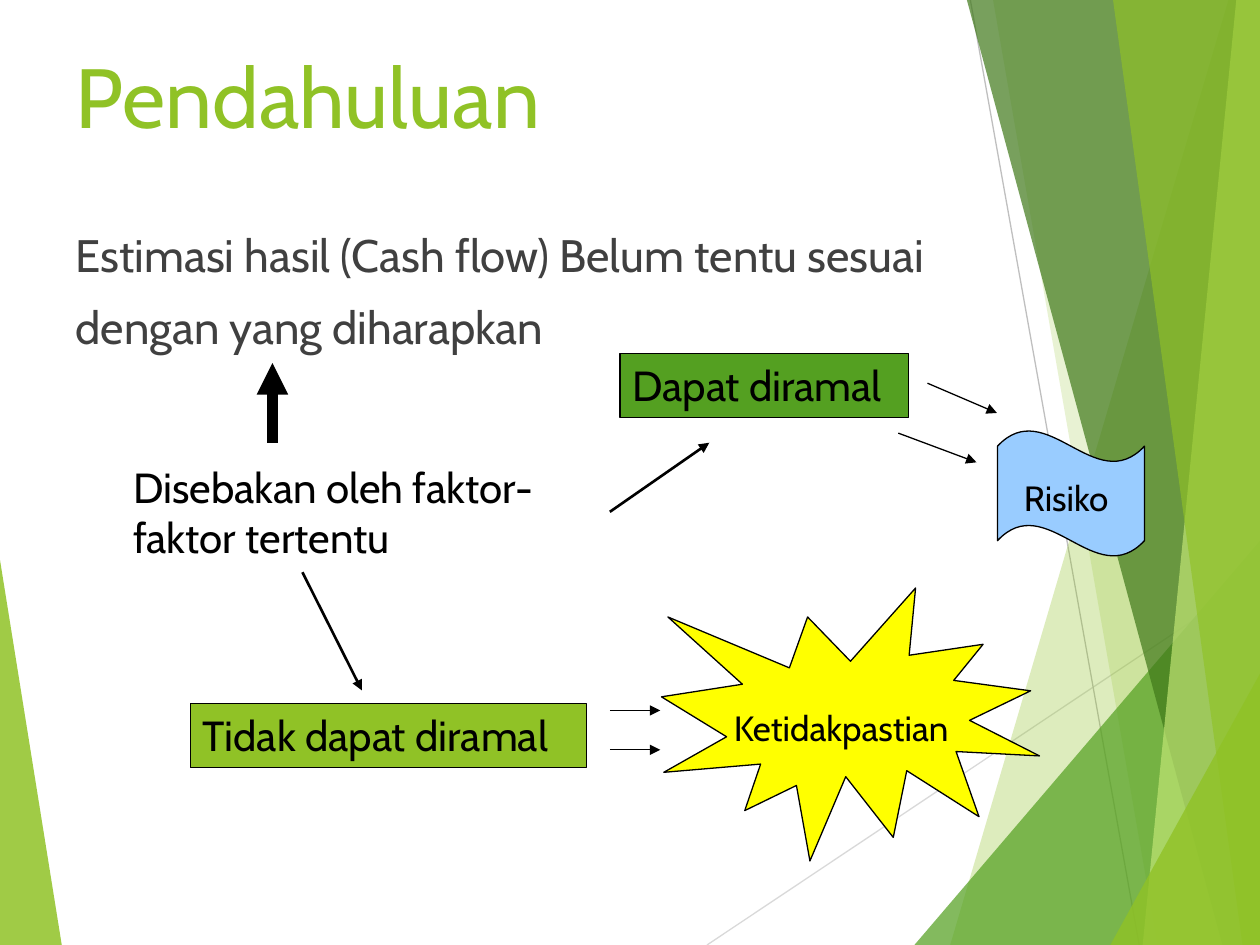
from typing import NamedTuple, Optional

from lxml.etree import SubElement
from pptx import Presentation
from pptx.dml.color import RGBColor
from pptx.enum.shapes import MSO_CONNECTOR, MSO_SHAPE
from pptx.enum.text import MSO_ANCHOR, MSO_AUTO_SIZE, PP_ALIGN
from pptx.oxml.ns import qn
from pptx.util import Pt

FONT = "Cabin"
BLACK = RGBColor(0x00, 0x00, 0x00)
CHARCOAL = RGBColor(0x40, 0x40, 0x40)
LIME = RGBColor(0x90, 0xC2, 0x26)
GREEN = RGBColor(0x54, 0xA0, 0x21)
DARK_GREEN = RGBColor(0x3F, 0x78, 0x19)
PALE_LIME = RGBColor(0xC0, 0xE4, 0x74)
SKY = RGBColor(0x99, 0xCC, 0xFF)
YELLOW = RGBColor(0xFF, 0xFF, 0x00)
LIGHT_GREY = RGBColor(0xD9, 0xD9, 0xD9)
GREY = RGBColor(0xBF, 0xBF, 0xBF)
WIDTH, HEIGHT = 720, 540


class Facet(NamedTuple):
    corners: list[tuple[float, float]]
    color: RGBColor
    opacity: int


class Line(NamedTuple):
    start: tuple[float, float]
    end: tuple[float, float]
    weight: float = 0.75
    color: RGBColor = BLACK
    arrow: bool = True


class Symbol(NamedTuple):
    preset: MSO_SHAPE
    box: tuple[float, float, float, float]
    fill: RGBColor


class Label(NamedTuple):
    lines: list[str]
    box: tuple[float, float, float, float]
    size: int = 24
    fill: Optional[RGBColor] = None


def right_facet(top: float, bottom: float, color: RGBColor, opacity: int) -> Facet:
    """Full-height facet between a slanted edge and the right slide edge."""
    return Facet([(top, 0), (bottom, HEIGHT), (WIDTH, HEIGHT), (WIDTH, 0)], color, opacity)


def corner_facet(left: float, top: float, color: RGBColor, opacity: int) -> Facet:
    """Triangle in the bottom right corner."""
    return Facet([(left, HEIGHT), (WIDTH, top), (WIDTH, HEIGHT)], color, opacity)


LEFT_FACET = Facet([(0, 320), (35.3, HEIGHT), (0, HEIGHT)], LIME, 85)
BACKDROP_LINES = [
    Line((404, 540), (720, 329), color=LIGHT_GREY, arrow=False),
    Line((554.5, 0), (651, 540), color=GREY, arrow=False),
]
RIGHT_FACETS = [
    right_facet(702, 543, LIME, 30),
    right_facet(567.5, 661.5, LIME, 20),
    corner_facet(522.5, 309, GREEN, 72),
    right_facet(552.5, 698.5, DARK_GREEN, 70),
    right_facet(706.5, 653, PALE_LIME, 70),
    right_facet(636, 710, LIME, 65),
    corner_facet(634.5, 385, LIME, 80),
]
SYMBOLS = [
    Symbol(MSO_SHAPE.WAVE, (570, 246, 84, 72), SKY),
    Symbol(MSO_SHAPE.EXPLOSION1, (378, 336, 216, 156), YELLOW),
]
LABELS = [
    Label(["Disebakan oleh faktor-", "faktor tertentu"], (69, 260, 255, 65)),
    Label(["Dapat diramal"], (354.3, 202, 165, 36.6), fill=GREEN),
    Label(["Tidak dapat diramal"], (108.7, 402, 226.3, 36.6), fill=LIME),
    Label(["Risiko"], (578, 268.8, 69, 31), 20),
    Label(["Ketidakpastian"], (412.3, 400.3, 145.5, 31), 20),
]
ARROWS = [
    Line((155.7, 253), (155.7, 207.5), 6),
    Line((172.8, 327), (206.8, 394.5), 1.5),
    Line((348.5, 292.5), (405.3, 253), 1.5),
    Line((348.5, 406), (377.3, 406)),
    Line((348.5, 428.5), (377.3, 428.5)),
    Line((530, 219), (569.7, 236)),
    Line((513.3, 247.5), (558, 264.2)),
]


def draw_facet(shapes, facet: Facet) -> None:
    first, *others = [(Pt(x), Pt(y)) for x, y in facet.corners]
    builder = shapes.build_freeform(*first)
    builder.add_line_segments(others, close=True)
    shape = builder.convert_to_shape()
    shape.shadow.inherit = False
    shape.fill.solid()
    shape.fill.fore_color.rgb = facet.color
    shape.line.fill.background()
    color = shape.element.find(".//" + qn("a:srgbClr"))
    SubElement(color, qn("a:alpha"), val=str(facet.opacity * 1000))


def draw_line(shapes, line: Line) -> None:
    connector = shapes.add_connector(
        MSO_CONNECTOR.STRAIGHT, *(Pt(v) for v in line.start + line.end)
    )
    connector.line.color.rgb = line.color
    connector.line.width = Pt(line.weight)
    properties = connector.element.spPr
    if line.arrow:
        SubElement(properties.find(qn("a:ln")), qn("a:tailEnd"), type="triangle")
    SubElement(properties, qn("a:effectLst"))


def draw_symbol(shapes, symbol: Symbol):
    shape = shapes.add_shape(symbol.preset, *(Pt(v) for v in symbol.box))
    shape.shadow.inherit = False
    shape.fill.solid()
    shape.fill.fore_color.rgb = symbol.fill
    shape.line.color.rgb = BLACK
    shape.line.width = Pt(0.75)
    return shape


def write_lines(frame, lines: list[str], size: int, color: RGBColor) -> None:
    for index, text in enumerate(lines):
        paragraph = frame.add_paragraph() if index else frame.paragraphs[0]
        paragraph.alignment = PP_ALIGN.LEFT
        run = paragraph.add_run()
        run.text = text
        run.font.name = FONT
        run.font.size = Pt(size)
        run.font.color.rgb = color


def draw_label(shapes, label: Label) -> None:
    if label.fill is None:
        holder = shapes.add_textbox(*(Pt(v) for v in label.box))
    else:
        holder = draw_symbol(shapes, Symbol(MSO_SHAPE.RECTANGLE, label.box, label.fill))
    frame = holder.text_frame
    frame.word_wrap = False
    frame.auto_size = MSO_AUTO_SIZE.SHAPE_TO_FIT_TEXT
    frame.vertical_anchor = MSO_ANCHOR.TOP
    write_lines(frame, label.lines, label.size, BLACK)


def fill_placeholder(shapes, placeholder, box, lines, size, color) -> None:
    """Place and fill a placeholder, in front of everything drawn so far."""
    placeholder.left, placeholder.top, placeholder.width, placeholder.height = map(Pt, box)
    frame = placeholder.text_frame
    frame.word_wrap = True
    frame.auto_size = MSO_AUTO_SIZE.NONE
    frame.vertical_anchor = MSO_ANCHOR.TOP
    write_lines(frame, lines, size, color)
    shapes.element.append(placeholder.element)


def main() -> None:
    presentation = Presentation()
    presentation.slide_width, presentation.slide_height = Pt(WIDTH), Pt(HEIGHT)
    slide = presentation.slides.add_slide(presentation.slide_layouts[1])
    shapes = slide.shapes
    title, body = shapes.title, slide.placeholders[1]

    draw_facet(shapes, LEFT_FACET)
    for line in BACKDROP_LINES:
        draw_line(shapes, line)
    for facet in RIGHT_FACETS:
        draw_facet(shapes, facet)
    for symbol in SYMBOLS:
        draw_symbol(shapes, symbol)

    fill_placeholder(shapes, title, (36, 21.6, 648, 90), ["Pendahuluan"], 48, LIME)
    estimate = ["Estimasi hasil (Cash flow) Belum tentu sesuai", "dengan yang diharapkan"]
    fill_placeholder(shapes, body, (36, 126, 585, 356.4), estimate, 26, CHARCOAL)
    for paragraph in body.text_frame.paragraphs:
        paragraph.space_before = Pt(10)
        properties = paragraph._p.get_or_add_pPr()
        properties.set("marL", str(Pt(27)))
        properties.set("indent", str(Pt(-27)))
        SubElement(properties, qn("a:buNone"))

    for label in LABELS:
        draw_label(shapes, label)
    for arrow in ARROWS:
        draw_line(shapes, arrow)
    presentation.save("out.pptx")


if __name__ == "__main__":
    main()
